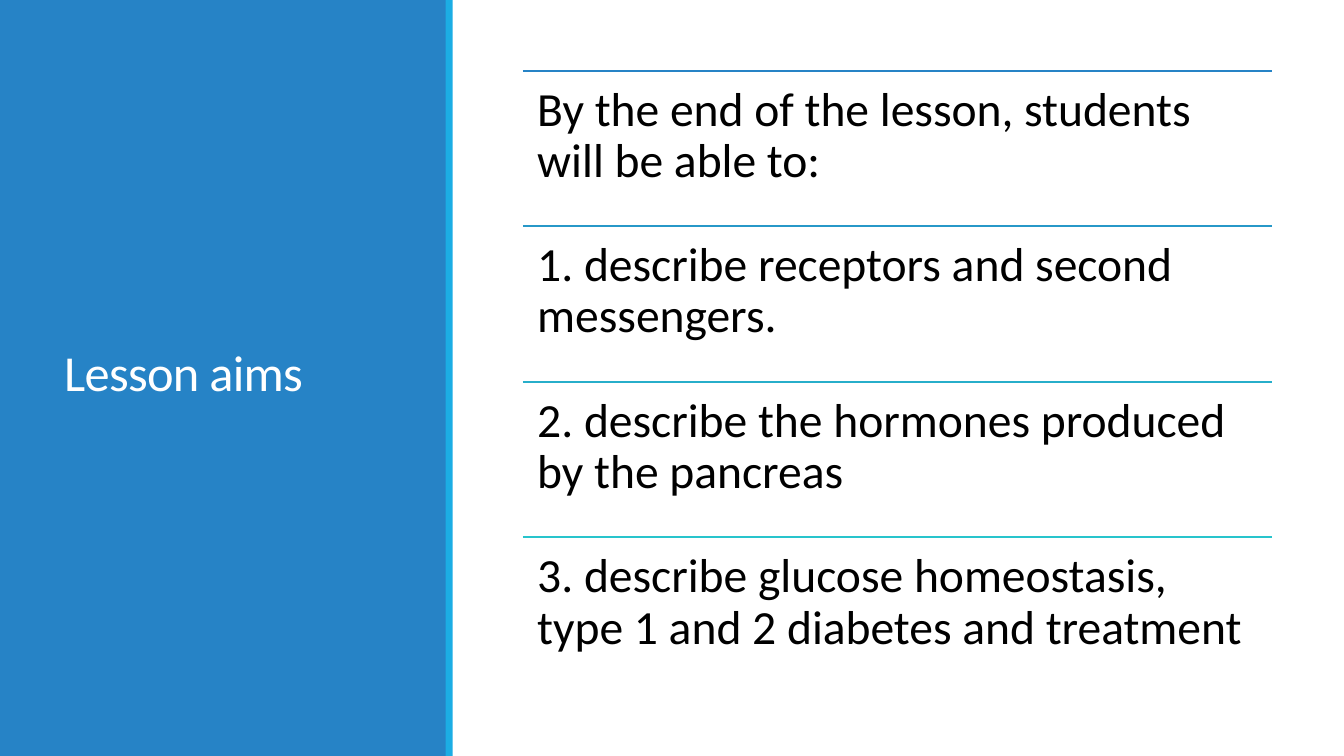
from dataclasses import dataclass

from lxml.etree import SubElement
from pptx import Presentation
from pptx.dml.color import RGBColor
from pptx.enum.shapes import MSO_CONNECTOR as Connector, MSO_SHAPE as Preset
from pptx.enum.text import MSO_ANCHOR as Anchor, PP_ALIGN as Align
from pptx.oxml.ns import qn
from pptx.slide import Slide
from pptx.util import Cm, Pt

SLIDE_WIDTH, SLIDE_HEIGHT = 33.87, 19.05
LIST_LEFT, LIST_TOP, LIST_WIDTH, ROW_HEIGHT = 13.18, 1.78, 18.87, 3.92


@dataclass(frozen=True)
class Box:
    """A rectangle in centimetres."""
    left: float
    top: float
    width: float
    height: float

    def lengths(self) -> tuple[Cm, ...]:
        return tuple(map(Cm, (self.left, self.top, self.width, self.height)))


@dataclass(frozen=True)
class Panel:
    box: Box
    color: str


@dataclass(frozen=True)
class Aim:
    text: str
    rule_color: str


@dataclass(frozen=True)
class TextStyle:
    size: float
    color: str
    line_spacing: float
    anchor: Anchor
    inset: float
    tracking: float = 0


PANELS = [
    Panel(Box(0, 0, 11.25, SLIDE_HEIGHT), "2683C6"),
    Panel(Box(11.23, 0, 0.18, SLIDE_HEIGHT), "1CADE4"),
]
AIMS = [
    Aim("By the end of the lesson, students will be able to:", "2683C6"),
    Aim("1. describe receptors and second messengers.", "2798C8"),
    Aim("2. describe the hormones produced by the pancreas", "27AECA"),
    Aim("3. describe glucose homeostasis, type 1 and 2 diabetes and treatment", "28C4CC"),
]
TITLE_STYLE = TextStyle(36, "FFFFFF", 0.85, Anchor.MIDDLE, 0.25, tracking=-0.5)
AIM_STYLE = TextStyle(34, "000000", 0.9, Anchor.TOP, 0.36)


def rgb(value: str) -> RGBColor:
    return RGBColor.from_string(value)


def set_attributes(target: object, values: dict[str, object]) -> None:
    for name, value in values.items():
        setattr(target, name, value)


def add_panel(slide: Slide, panel: Panel) -> None:
    shape = slide.shapes.add_shape(Preset.RECTANGLE, *panel.box.lengths())
    shape.shadow.inherit = False
    shape.fill.solid()
    shape.fill.fore_color.rgb = rgb(panel.color)
    shape.line.fill.background()


def add_text(slide: Slide, box: Box, text: str, style: TextStyle) -> None:
    shape = slide.shapes.add_textbox(*box.lengths())
    frame = shape.text_frame
    sides = ("left", "top", "right", "bottom")
    set_attributes(frame, {
        "word_wrap": True,
        "vertical_anchor": style.anchor,
        **{f"margin_{side}": Cm(style.inset) for side in sides},
    })
    paragraph = frame.paragraphs[0]
    set_attributes(paragraph, {"alignment": Align.LEFT, "line_spacing": style.line_spacing})
    run = paragraph.add_run()
    run.text = text
    set_attributes(run.font, {"name": "Calibri", "size": Pt(style.size)})
    run.font.color.rgb = rgb(style.color)
    if style.tracking:
        for properties in shape.element.iter(qn("a:rPr")):
            properties.set("spc", str(round(style.tracking * 100)))


def add_rule(slide: Slide, top: float, color: str) -> None:
    """Draw the horizontal line above one aim."""
    ends = (LIST_LEFT, top, LIST_LEFT + LIST_WIDTH, top)
    rule = slide.shapes.add_connector(Connector.STRAIGHT, *map(Cm, ends))
    rule.line.width = Pt(1.25)
    rule.line.color.rgb = rgb(color)
    SubElement(rule.element.spPr, qn("a:effectLst"))


def main() -> None:
    presentation = Presentation()
    set_attributes(presentation, {
        "slide_width": Cm(SLIDE_WIDTH),
        "slide_height": Cm(SLIDE_HEIGHT),
    })
    slide = presentation.slides.add_slide(presentation.slide_layouts[6])
    for panel in PANELS:
        add_panel(slide, panel)
    add_text(slide, Box(1.37, 1.45, 8.56, 16.03), "Lesson aims", TITLE_STYLE)
    for row, aim in enumerate(AIMS):
        top = LIST_TOP + row * ROW_HEIGHT
        add_rule(slide, top, aim.rule_color)
        add_text(slide, Box(LIST_LEFT, top, LIST_WIDTH, ROW_HEIGHT), aim.text, AIM_STYLE)
    presentation.save("out.pptx")


if __name__ == "__main__":
    main()
